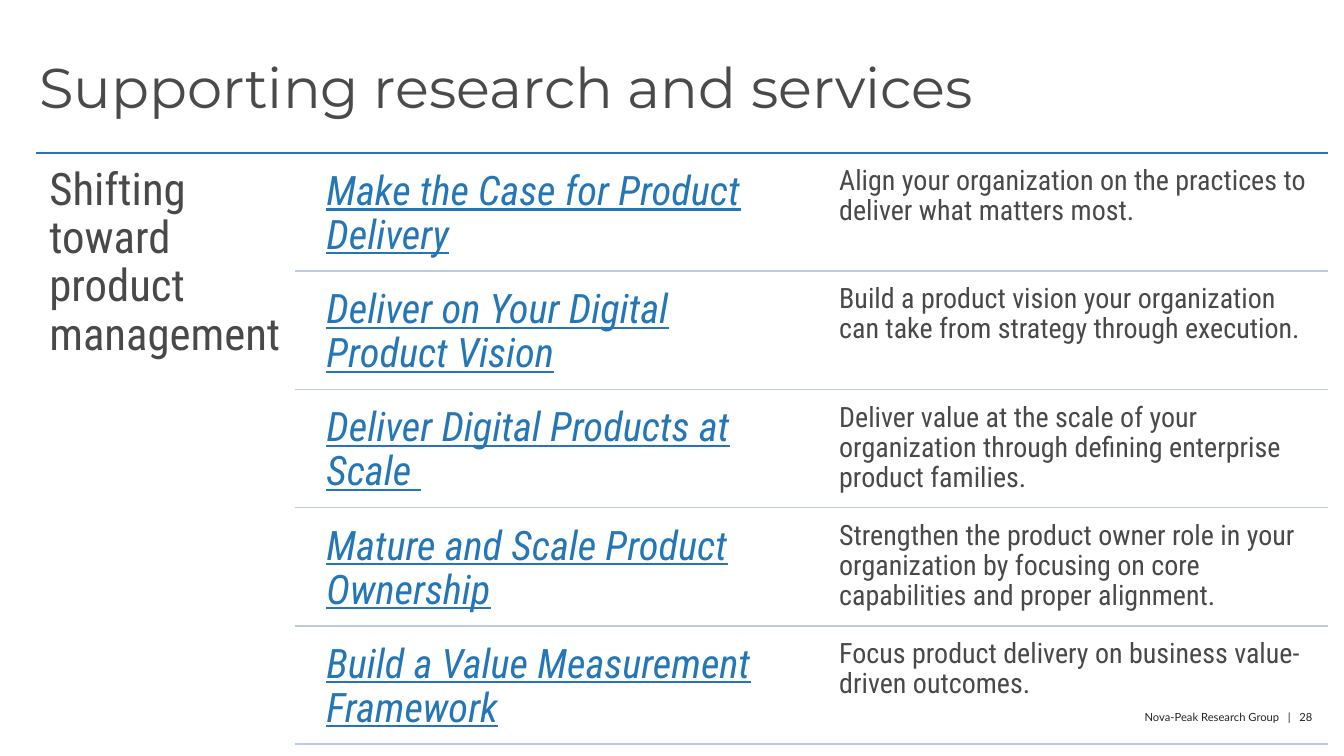
"""Build the slide listing supporting research and services."""
from lxml import etree
from pptx import Presentation
from pptx.dml.color import RGBColor
from pptx.enum.shapes import MSO_CONNECTOR
from pptx.enum.text import MSO_ANCHOR, MSO_AUTO_SIZE, PP_ALIGN
from pptx.oxml.ns import qn
from pptx.util import Inches, Pt

STRAIGHT = MSO_CONNECTOR.STRAIGHT
TOP = MSO_ANCHOR.TOP
NO_FIT = MSO_AUTO_SIZE.NONE
LEFT, RIGHT = PP_ALIGN.LEFT, PP_ALIGN.RIGHT

TITLE = "Supporting research and services"
THEME = "Shifting toward product management"
FOOTER = "Nova-Peak Research Group   |   28"
RESEARCH = [
    ("Make the Case for Product Delivery",
     "Align your organization on the practices to deliver what matters most."),
    ("Deliver on Your Digital Product Vision",
     "Build a product vision your organization can take from strategy through execution."),
    ("Deliver Digital Products at Scale ",
     "Deliver value at the scale of your organization through defining enterprise product families."),
    ("Mature and Scale Product Ownership",
     "Strengthen the product owner role in your organization by focusing on core "
     "capabilities and proper alignment."),
    ("Build a Value Measurement Framework",
     "Focus product delivery on business value-driven outcomes."),
]

BODY_FONT = "Roboto Condensed"
GREY, BLUE, RULE = "494949", "2476B7", "BECADF"
LIST_TOP, ROW_GAP, ROW_H = 1.57, 1.173, 1.12
NAME_X, NOTE_X, COL_W = 3.12, 8.25, 4.94
RULE_X, RIGHT_X = 2.93, 13.18


def rgb(value):
    return RGBColor.from_string(value)


def write(sp, text, size, font, color, inset=0, spacing=0.9, align=LEFT, link=False):
    tf = sp.text_frame
    tf.word_wrap = True
    tf.auto_size = NO_FIT
    tf.vertical_anchor = TOP
    tf.margin_left = tf.margin_right = Inches(inset)
    tf.margin_top = tf.margin_bottom = Inches(inset)
    p = tf.paragraphs[0]
    p.alignment = align
    p.line_spacing = spacing
    r = p.add_run()
    r.text = text
    r.font.name = font
    r.font.size = Pt(size)
    r.font.color.rgb = rgb(color)
    if link:
        r.font.italic = r.font.underline = True
    return tf


def add_text(slide, box, *args, **kwargs):
    sp = slide.shapes.add_textbox(*map(Inches, box))
    return write(sp, *args, **kwargs)


def add_rule(slide, x, y, color):
    line = slide.shapes.add_connector(
        STRAIGHT, Inches(x), Inches(y), Inches(RIGHT_X), Inches(y))
    line.line.color.rgb = rgb(color)
    line.line.width = Pt(1)
    etree.SubElement(line._element.spPr, qn("a:effectLst"))


def main():
    prs = Presentation()
    prs.slide_width, prs.slide_height = Inches(13.34), Inches(7.5)
    slide = prs.slides.add_slide(prs.slide_layouts[5])

    title = slide.shapes.title
    title.left, title.top = Inches(0.39), Inches(0.6)
    title.width, title.height = Inches(12.6), Inches(1.24)
    write(title, TITLE, 40, "Montserrat", "4A4A4A")

    add_rule(slide, 0.36, 1.52, BLUE)
    add_text(slide, (0.36, 1.52, 2.56, 5.93), THEME, 32, BODY_FONT, GREY, inset=0.13)

    for i, (name, note) in enumerate(RESEARCH):
        y = LIST_TOP + i * ROW_GAP
        add_text(slide, (NAME_X, y, COL_W, ROW_H), name, 29, BODY_FONT, BLUE,
                 inset=0.12, link=True)
        add_text(slide, (NOTE_X, y, COL_W, ROW_H), note, 20, BODY_FONT, GREY, inset=0.08)
        add_rule(slide, RULE_X, y + ROW_H, RULE)

    tf = add_text(slide, (9.63, 7.05, 3.76, 0.13), FOOTER, 8, "Lato", "242424",
                  spacing=1.0, align=RIGHT)
    tf.margin_right = Inches(0.36)

    prs.save("out.pptx")


if __name__ == "__main__":
    main()
